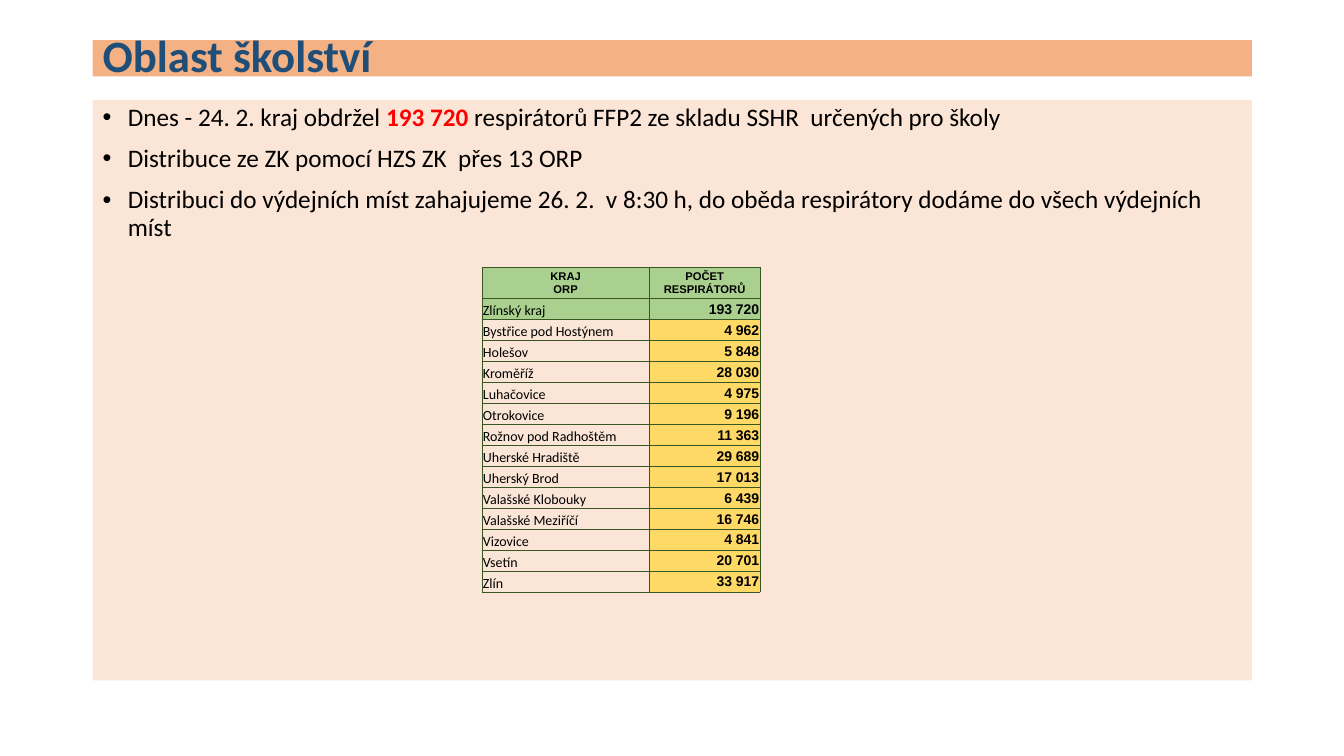
from copy import deepcopy

from pptx import Presentation, util as u
from pptx.dml.color import RGBColor
from pptx.enum import shapes, text
from pptx.oxml import parse_xml
from pptx.oxml.ns import nsdecls, qn

NAVY = RGBColor(0x1F, 0x4E, 0x79)
ORANGE = RGBColor(0xF4, 0xB1, 0x83)
PEACH = RGBColor(0xFB, 0xE5, 0xD6)
GREEN = RGBColor(0xA9, 0xD0, 0x8E)
YELLOW = RGBColor(0xFF, 0xD9, 0x66)
BORDER = RGBColor(0x37, 0x56, 0x23)
BLACK = RGBColor(0, 0, 0)
RED = RGBColor(0xFF, 0, 0)

HEADING = {"name": "Calibri", "size": u.Pt(32), "bold": True, "color": NAVY}
BODY = {"name": "Calibri", "size": u.Pt(18), "bold": False, "color": BLACK}
STRESSED = BODY | {"bold": True, "color": RED}
COLUMN_HEAD = {"name": "Arial", "size": u.Pt(8), "bold": True, "color": BLACK}
DISTRICT = {"name": "Calibri", "size": u.Pt(10), "bold": False, "color": BLACK}
AMOUNT = DISTRICT | {"name": "Arial", "bold": True}

CENTER, LEFT, RIGHT = text.PP_ALIGN.CENTER, text.PP_ALIGN.LEFT, text.PP_ALIGN.RIGHT
TOP, MIDDLE, BOTTOM = text.MSO_ANCHOR.TOP, text.MSO_ANCHOR.MIDDLE, text.MSO_ANCHOR.BOTTOM


class Deck:
    """Draws on one slide with lengths in hundredths of its width and height."""

    def __init__(self):
        self.file = Presentation()
        self.file.slide_width = u.Inches(13.33)
        self.file.slide_height = u.Inches(7.5)
        self.slide = self.file.slides.add_slide(self.file.slide_layouts[6])

    def cols(self, count):
        return round(self.file.slide_width * count / 100)

    def rows(self, count):
        return round(self.file.slide_height * count / 100)

    def style(self, target, values):
        for key, value in values.items():
            if key == "color":
                target.color.rgb = value
            else:
                setattr(target, key, value)

    def wording(self, paragraph, pieces, layout):
        self.style(paragraph, layout)
        for words, font in pieces:
            for number, line in enumerate(words.split("\n")):
                if number:
                    paragraph.add_line_break()
                run = paragraph.add_run()
                run.text = line
                self.style(run.font, font)
                for line_break in paragraph._p.findall(qn("a:br")):
                    if len(line_break) == 0:
                        line_break.append(deepcopy(run._r.rPr))

    def panel(self, left, top, width, height, fill, anchor, paragraphs, layout, bulleted=False):
        panel = self.slide.shapes.add_shape(
            shapes.MSO_SHAPE.RECTANGLE,
            self.cols(left), self.rows(top), self.cols(width), self.rows(height))
        panel.shadow.inherit = False
        panel.fill.solid()
        panel.fill.fore_color.rgb = fill
        panel.line.fill.background()
        frame = panel.text_frame
        self.style(frame, {"word_wrap": True, "vertical_anchor": anchor})
        for number, pieces in enumerate(paragraphs):
            paragraph = frame.add_paragraph() if number else frame.paragraphs[0]
            self.wording(paragraph, pieces, layout)
            if bulleted:
                self.bullet(paragraph)

    def bullet(self, paragraph):
        properties = paragraph._p.get_or_add_pPr()
        properties.set("marL", str(u.Inches(0.25)))
        properties.set("indent", str(-u.Inches(0.25)))
        properties.append(parse_xml(f'<a:buFont {nsdecls("a")} typeface="Arial"/>'))
        properties.append(parse_xml(f'<a:buChar {nsdecls("a")} char="•"/>'))

    def table(self, left, top, widths, heights, records):
        table = self.slide.shapes.add_table(
            len(heights), len(widths), self.cols(left), self.rows(top),
            self.cols(sum(widths)), self.rows(sum(heights))).table
        self.style(table, {"first_row": False, "horz_banding": False})
        for column, width in zip(table.columns, widths):
            column.width = self.cols(width)
        for row, height, record in zip(table.rows, heights, records):
            row.height = self.rows(height)
            for cell, values in zip(row.cells, record):
                self.cell(cell, *values)

    def cell(self, cell, words, font, align, anchor, fill):
        inset = u.Inches(0.01)
        self.style(cell, {"margin_left": inset, "margin_right": inset, "margin_top": inset,
                          "margin_bottom": 0, "vertical_anchor": anchor})
        self.wording(cell.text_frame.paragraphs[0], [(words, font)], {"alignment": align})
        properties = cell._tc.get_or_add_tcPr()
        for side in ("lnL", "lnR", "lnT", "lnB"):
            properties.append(parse_xml(
                f'<a:{side} {nsdecls("a")} w="{u.Pt(0.5)}"><a:solidFill>'
                f'<a:srgbClr val="{BORDER}"/></a:solidFill></a:{side}>'))
        if fill is None:
            cell.fill.background()
        else:
            cell.fill.solid()
            cell.fill.fore_color.rgb = fill


TASKS = [
    [("Dnes - 24. 2. kraj obdržel ", BODY), ("193 720 ", STRESSED),
     ("respirátorů FFP2 ze skladu SSHR  určených pro školy", BODY)],
    [("Distribuce ze ZK pomocí HZS ZK  přes 13 ORP", BODY)],
    [("Distribuci do výdejních míst zahajujeme 26. 2.  v 8:30 h, "
      "do oběda respirátory dodáme do všech výdejních míst", BODY)],
]
RESPIRATORS = [
    ("Zlínský kraj", "193 720"), ("Bystřice pod Hostýnem", "4 962"), ("Holešov", "5 848"),
    ("Kroměříž", "28 030"), ("Luhačovice", "4 975"), ("Otrokovice", "9 196"),
    ("Rožnov pod Radhoštěm", "11 363"), ("Uherské Hradiště", "29 689"),
    ("Uherský Brod", "17 013"), ("Valašské Klobouky", "6 439"),
    ("Valašské Meziříčí", "16 746"), ("Vizovice", "4 841"), ("Vsetín", "20 701"),
    ("Zlín", "33 917"),
]


def main():
    deck = Deck()
    deck.panel(6.9, 5.33, 86.25, 4.8, ORANGE, MIDDLE, [[("Oblast školství", HEADING)]],
               {"alignment": LEFT, "line_spacing": 0.9})
    deck.panel(6.9, 13.2, 86.25, 76.8, PEACH, TOP, TASKS,
               {"alignment": LEFT, "line_spacing": 0.9, "space_before": u.Pt(10)}, bulleted=True)
    records = [[(head, COLUMN_HEAD, CENTER, MIDDLE, GREEN)
                for head in ("KRAJ\nORP", "POČET\nRESPIRÁTORŮ")]]
    for number, (district, amount) in enumerate(RESPIRATORS):
        name_fill, amount_fill = (None, YELLOW) if number else (GREEN, GREEN)
        records.append([(district, DISTRICT, LEFT, BOTTOM, name_fill),
                        (amount, AMOUNT, RIGHT, MIDDLE, amount_fill)])
    deck.table(35.86, 35.33, [12.45, 8.25], [4.13] + [2.78] * len(RESPIRATORS), records)
    deck.file.save("out.pptx")


if __name__ == "__main__":
    main()
